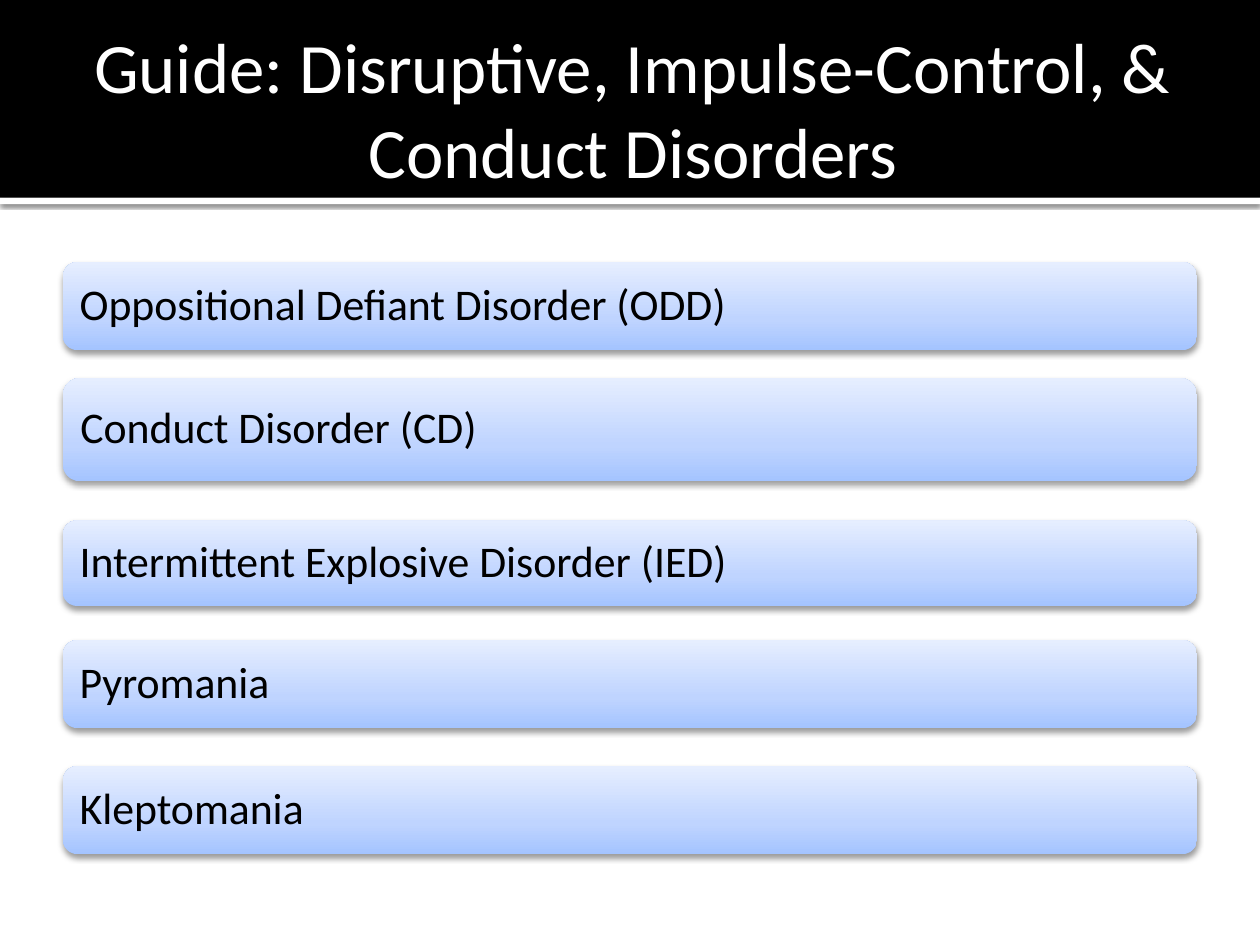
from lxml.etree import SubElement
from pptx import Presentation
from pptx.dml.color import RGBColor
from pptx.enum.shapes import MSO_SHAPE
from pptx.enum.text import MSO_ANCHOR, PP_ALIGN
from pptx.oxml.ns import qn
from pptx.util import Inches, Pt

TITLE = "Guide: Disruptive, Impulse-Control, & Conduct Disorders"
DISORDERS = [
    ("Oppositional Defiant Disorder (ODD)", 2.08, 0.7),
    ("Conduct Disorder (CD)", 3, 0.82),
    ("Intermittent Explosive Disorder (IED)", 4.13, 0.68),
    ("Pyromania", 5.08, 0.7),
    ("Kleptomania", 6.08, 0.7),
]
COLORS = {"black": "000000", "white": "FFFFFF", "deep": "A4C4FF", "middle": "BFD4FF", "pale": "E6EEFF"}
GRADIENT = [(0, "deep"), (35, "middle"), (100, "pale")]
FONT = "Calibri"
WIDTH, HEIGHT = 10, 7.5
MARGIN = WIDTH / 20
BAND_HEIGHT = 1.57
STRIP_HEIGHT = 0.05


def color(name):
    return RGBColor.from_string(COLORS[name])


def add_box(page, kind, left, top, width, height):
    box = page.shapes.add_shape(kind, Inches(left), Inches(top), Inches(width), Inches(height))
    box.line.fill.background()
    box.shadow.inherit = False
    return box


def add_color(parent, name):
    return SubElement(parent, qn("a:srgbClr"), val=COLORS[name])


def add_shadow(box, opacity, blur, distance):
    effects = box._element.spPr.find(qn("a:effectLst"))
    shadow = SubElement(effects, qn("a:outerShdw"), blurRad=str(Pt(blur)), dist=str(Pt(distance)),
                        dir="5400000", rotWithShape="0")
    SubElement(add_color(shadow, "black"), qn("a:alpha"), val=str(opacity * 1000))


def add_gradient(box):
    properties = box._element.spPr
    gradient = SubElement(properties, qn("a:gradFill"), rotWithShape="1")
    stops = SubElement(gradient, qn("a:gsLst"))
    for position, name in GRADIENT:
        add_color(SubElement(stops, qn("a:gs"), pos=str(position * 1000)), name)
    SubElement(gradient, qn("a:lin"), ang="16200000", scaled="0")
    properties.find(qn("a:ln")).addprevious(gradient)


def write(box, text, size, name, alignment):
    frame = box.text_frame
    frame.text = text
    frame.word_wrap = True
    frame.vertical_anchor = MSO_ANCHOR.MIDDLE
    para = frame.paragraphs[0]
    para.alignment = alignment
    span = para.runs[0]
    span.font.name = FONT
    span.font.size = Pt(size)
    span.font.color.rgb = color(name)
    return frame


def add_header(page):
    strip = add_box(page, MSO_SHAPE.RECTANGLE, 0, BAND_HEIGHT, WIDTH, STRIP_HEIGHT)
    strip.fill.solid()
    strip.fill.fore_color.rgb = color("white")
    add_shadow(strip, 60, 2.5, 0.8)
    band = add_box(page, MSO_SHAPE.RECTANGLE, 0, 0, WIDTH, BAND_HEIGHT)
    band.fill.solid()
    band.fill.fore_color.rgb = color("black")

    title = page.shapes.title
    title.left, title.top = Inches(MARGIN), Inches(0.17)
    title.width, title.height = Inches(WIDTH - 2 * MARGIN), Inches(1.37)
    frame = write(title, TITLE, 40.5, "white", PP_ALIGN.CENTER)
    frame.margin_left = Inches(0.1)
    frame.margin_right = frame.margin_top = frame.margin_bottom = Inches(0.05)
    band._element.addnext(title._element)


def add_disorder(page, text, top, height):
    box = add_box(page, MSO_SHAPE.ROUNDED_RECTANGLE, MARGIN, top, WIDTH - 2 * MARGIN, height)
    add_gradient(box)
    add_shadow(box, 38, 3.5, 2)
    frame = write(box, text, 25, "black", PP_ALIGN.LEFT)
    frame.margin_left = frame.margin_right = Inches(0.1)
    frame.margin_top = frame.margin_bottom = Inches(0.1)
    frame.paragraphs[0].line_spacing = 0.9


def main():
    deck = Presentation()
    deck.slide_width, deck.slide_height = Inches(WIDTH), Inches(HEIGHT)
    page = deck.slides.add_slide(deck.slide_layouts[5])
    add_header(page)
    for text, top, height in DISORDERS:
        add_disorder(page, text, top, height)
    deck.save("out.pptx")


if __name__ == "__main__":
    main()
